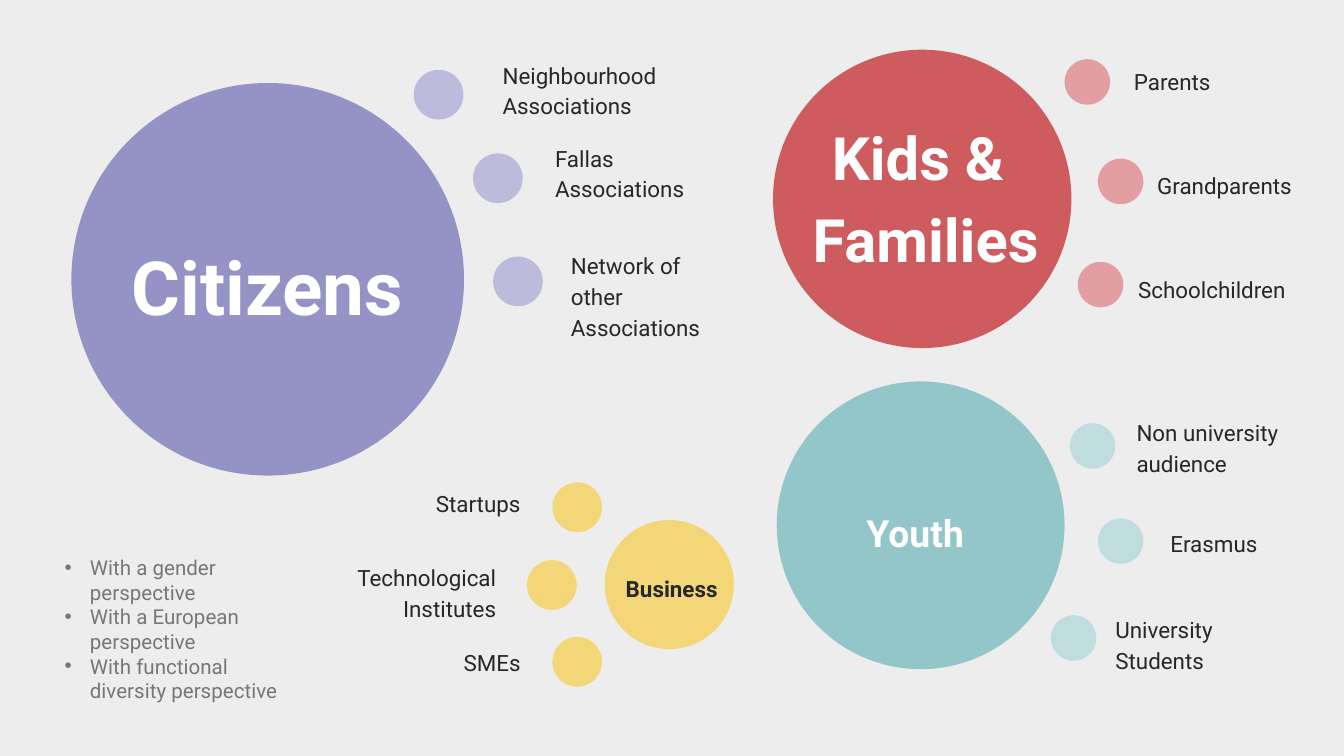
from dataclasses import dataclass

from lxml import etree
from pptx import Presentation
from pptx.dml.color import RGBColor
from pptx.enum.shapes import MSO_SHAPE
from pptx.enum.text import MSO_ANCHOR, PP_ALIGN
from pptx.oxml.ns import qn
from pptx.util import Cm, Pt

OVAL = MSO_SHAPE.OVAL
TOP = MSO_ANCHOR.TOP
LEFT, CENTER, RIGHT = PP_ALIGN.LEFT, PP_ALIGN.CENTER, PP_ALIGN.RIGHT

FONT = "Roboto"
COLORS = {
    "background": "EDEDED",
    "ink": "272727",
    "white": "FFFFFF",
    "grey": "777777",
    "citizens": "9593C6",
    "citizens_light": "BDBBDB",
    "kids": "CE5C5F",
    "kids_light": "E29EA0",
    "youth": "93C6C9",
    "youth_light": "BFDDDF",
    "business": "F2D677",
}


@dataclass
class Audience:
    """Positions in cm: circle is (left, top, diameter), title_box a full box,
    members hold (text, lines, dot left, dot top, label left, top, width)."""
    title: str
    title_size: int
    title_color: str
    title_box: tuple
    color: str
    circle: tuple
    dot_color: str
    dot_size: float
    members: list
    align: PP_ALIGN = LEFT
    grouped: bool = False


AUDIENCES = [
    Audience("Citizens", 40, "white", (1.5, 4.06, 7.11, 2.49),
             "citizens", (1.35, 1.57, 7.42), "citizens_light", 0.94, [
                 ("Neighbourhood Associations", 2, 7.82, 1.32, 9.25, 0.84, 3.99),
                 ("Fallas Associations", 2, 8.94, 2.9, 10.24, 2.41, 3.28),
                 ("Network of other Associations", 3, 9.32, 4.85, 10.54, 4.45, 3.28),
             ]),
    Audience("Kids & \nFamilies", 32, "white", (13.94, 1.83, 7.11, 3.66),
             "kids", (14.61, 0.94, 5.64), "kids_light", 0.86, [
                 ("Parents", 1, 20.12, 1.12, 21.18, 0.97, 3.71),
                 ("Grandparents", 1, 20.75, 3.0, 21.62, 2.92, 3.28),
                 ("Schoolchildren", 1, 20.37, 4.95, 21.26, 4.9, 3.71),
             ], grouped=True),
    Audience("Youth ", 20, "white", (15.34, 9.27, 4.09, 1.5),
             "youth", (14.68, 7.21, 5.44), "youth_light", 0.86, [
                 ("Non university audience", 2, 20.22, 8.0, 21.23, 7.59, 3.28),
                 ("Erasmus", 1, 20.75, 9.8, 21.87, 9.7, 3.28),
                 ("University Students", 2, 19.86, 11.63, 20.83, 11.33, 3.68),
             ]),
    Audience("Business", 12, "ink", (9.14, 10.54, 7.11, 1.09),
             "business", (11.43, 9.83, 2.44), "business", 0.94, [
                 ("Startups", 1, 10.44, 9.12, 6.81, 8.94, 3.28),
                 ("Technological Institutes", 2, 9.96, 10.59, 6.35, 10.34, 3.28),
                 ("SMEs", 1, 10.44, 12.04, 6.81, 11.94, 3.28),
             ], align=RIGHT, grouped=True),
]

PERSPECTIVES = [
    "With a gender perspective",
    "With a European perspective",
    "With functional diversity perspective",
]


def rgb(name):
    return RGBColor.from_string(COLORS[name])


def add_circle(shapes, left, top, diameter, color):
    circle = shapes.add_shape(OVAL, Cm(left), Cm(top), Cm(diameter), Cm(diameter))
    circle.shadow.inherit = False
    circle.fill.solid()
    circle.fill.fore_color.rgb = rgb(color)
    circle.line.fill.background()


def add_text(shapes, box, text, size, color, align=LEFT, bold=False,
             spacing=1.15, inset_y=0.25):
    """Add a wrapped text box, one paragraph per line of text."""
    frame = shapes.add_textbox(*(Cm(length) for length in box)).text_frame
    frame.word_wrap = True
    frame.vertical_anchor = TOP
    frame.margin_left = frame.margin_right = Cm(0.25)
    frame.margin_top = frame.margin_bottom = Cm(inset_y)
    frame.text = text
    for paragraph in frame.paragraphs:
        paragraph.alignment = align
        paragraph.line_spacing = spacing
        for run in paragraph.runs:
            run.font.name = FONT
            run.font.size = Pt(size)
            run.font.bold = bold
            run.font.color.rgb = rgb(color)
    return frame


def add_bullet(paragraph, color):
    properties = paragraph._p.get_or_add_pPr()
    indent = Cm(0.48)
    properties.set("marL", str(indent))
    properties.set("indent", str(-indent))
    bullet_color = etree.SubElement(properties, qn("a:buClr"))
    etree.SubElement(bullet_color, qn("a:srgbClr"), val=COLORS[color])
    etree.SubElement(properties, qn("a:buFont"), typeface="Arial")
    etree.SubElement(properties, qn("a:buChar"), char="•")


def add_audience(slide, audience):
    shapes = slide.shapes
    if audience.grouped:
        shapes = shapes.add_group_shape().shapes
    add_circle(shapes, *audience.circle, audience.color)
    for text, lines, dot_left, dot_top, left, top, width in audience.members:
        add_circle(shapes, dot_left, dot_top, audience.dot_size, audience.dot_color)
        height = 0.49 + 0.6 * lines
        add_text(shapes, (left, top, width, height), text, 12, "ink", audience.align)
    add_text(shapes, audience.title_box, audience.title, audience.title_size,
             audience.title_color, CENTER, bold=True)


def add_perspectives(slide):
    frame = add_text(slide.shapes, (0.97, 10.36, 4.65, 3.07), "\n".join(PERSPECTIVES),
                     11, "grey", spacing=1.0, inset_y=0.13)
    for paragraph in frame.paragraphs:
        add_bullet(paragraph, "grey")


def main():
    presentation = Presentation()
    presentation.slide_width = Cm(25.4)
    presentation.slide_height = Cm(14.29)
    slide = presentation.slides.add_slide(presentation.slide_layouts[6])
    slide.background.fill.solid()
    slide.background.fill.fore_color.rgb = rgb("background")
    for audience in AUDIENCES:
        add_audience(slide, audience)
    add_perspectives(slide)
    presentation.save("out.pptx")


if __name__ == "__main__":
    main()
